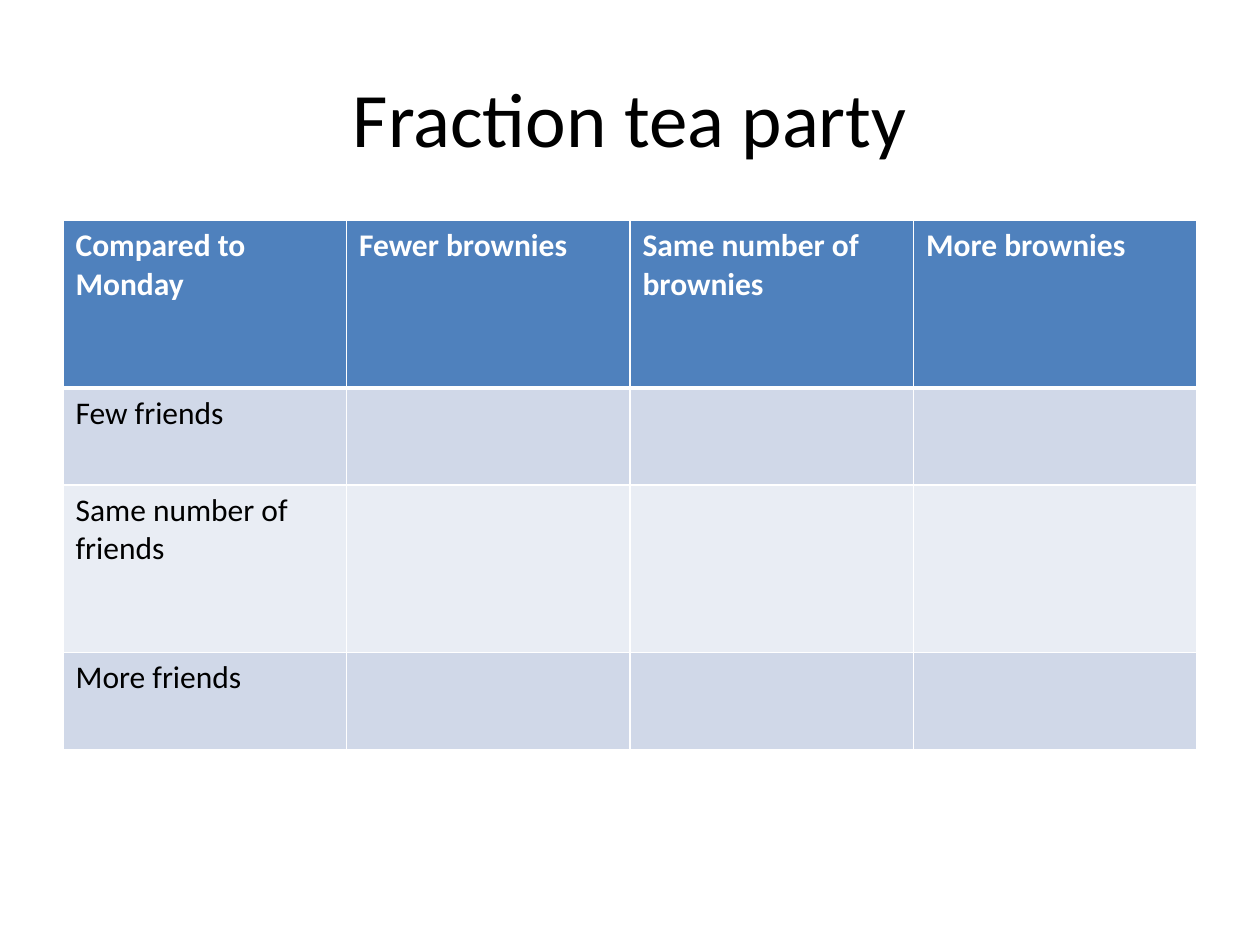
from lxml.etree import SubElement
from pptx import Presentation
from pptx.dml.color import RGBColor
from pptx.enum.text import MSO_ANCHOR as Anchor, PP_ALIGN as Align
from pptx.oxml.ns import qn
from pptx.util import Pt

WHITE = RGBColor(0xFF, 0xFF, 0xFF)
BLACK = RGBColor(0x00, 0x00, 0x00)
HEADER_BLUE = RGBColor(0x4F, 0x81, 0xBD)
BAND_DARK = RGBColor(0xD0, 0xD8, 0xE8)
BAND_LIGHT = RGBColor(0xE9, 0xED, 0xF4)

COLUMN_HEADS = ["Compared to Monday", "Fewer brownies",
                "Same number of brownies", "More brownies"]
ROW_HEADS = ["Few friends", "Same number of friends", "More friends"]
TALL, SHORT = 95.76, 55.44


def write(frame, text, font="Calibri", size=18, color=BLACK, bold=False, align=Align.LEFT):
    para = frame.paragraphs[0]
    para.alignment = align
    span = para.add_run()
    span.text = text
    span.font.name = font
    span.font.size = Pt(size)
    span.font.bold = bold
    span.font.color.rgb = color


def set_borders(cell, **widths):
    """Draw cell borders; widths are points keyed L, R, T and B, in that order."""
    properties = cell._tc.get_or_add_tcPr()
    for side, width in widths.items():
        line = SubElement(properties, qn(f"a:ln{side}"), w=str(Pt(width)))
        fill = SubElement(line, qn("a:solidFill"))
        SubElement(fill, qn("a:srgbClr"), val=str(WHITE))


class SlideBuilder:
    def __init__(self, page, font="Calibri"):
        self.page = page
        self.font = font

    def title(self, text, left, top, width, height):
        box = self.page.shapes.title
        box.left, box.top, box.width, box.height = map(Pt, (left, top, width, height))
        box.text_frame.vertical_anchor = Anchor.MIDDLE
        write(box.text_frame, text, font=self.font, size=44, align=Align.CENTER)

    def table(self, rows, left, top, width, heights):
        column_count = len(rows[0])
        table = self.page.shapes.add_table(
            len(rows), column_count, Pt(left), Pt(top), Pt(width), Pt(sum(heights))).table
        for column in table.columns:
            column.width = Pt(width / column_count)
        for r, (texts, height) in enumerate(zip(rows, heights)):
            table.rows[r].height = Pt(height)
            for c, text in enumerate(texts):
                self.cell(table.cell(r, c), text, r)

    def cell(self, cell, text, row):
        header = row == 0
        set_borders(cell, L=1, R=1, T=3 if row == 1 else 1, B=3 if header else 1)
        cell.fill.solid()
        cell.fill.fore_color.rgb = (
            HEADER_BLUE if header else BAND_DARK if row % 2 else BAND_LIGHT)
        if text:
            write(cell.text_frame, text, font=self.font,
                  color=WHITE if header else BLACK, bold=header)


def main():
    deck = Presentation()
    deck.slide_width, deck.slide_height = Pt(720), Pt(540)
    builder = SlideBuilder(deck.slides.add_slide(deck.slide_layouts[5]))
    builder.title("Fraction tea party", 36, 21.6, 648, 90)
    blanks = [""] * (len(COLUMN_HEADS) - 1)
    rows = [COLUMN_HEADS] + [[head] + blanks for head in ROW_HEADS]
    builder.table(rows, 36, 126, 648, [TALL, SHORT, TALL, SHORT])
    deck.save("out.pptx")


if __name__ == "__main__":
    main()
